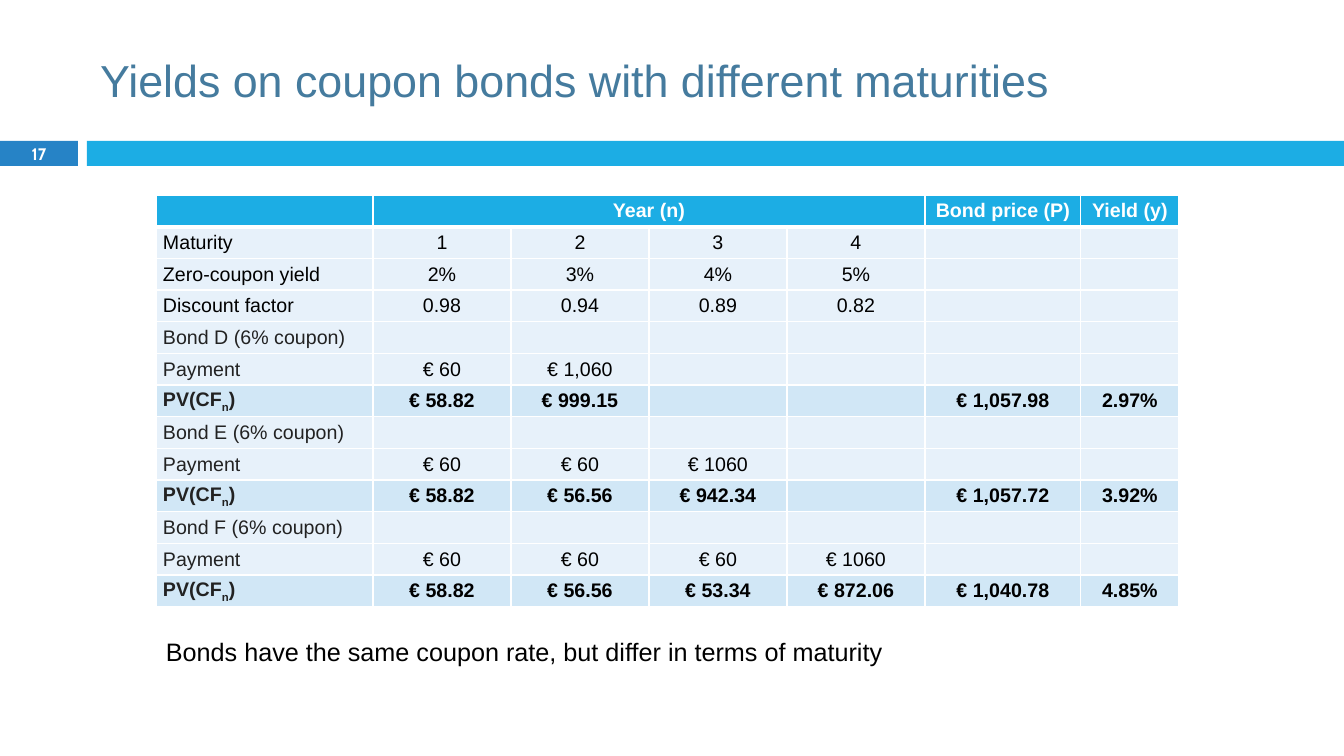
import pptx
import pptx.dml.color
import pptx.enum.shapes
import pptx.enum.text
import pptx.oxml
import pptx.oxml.ns
import pptx.util

ALIGN = pptx.enum.text.PP_ALIGN
MIDDLE = pptx.enum.text.MSO_ANCHOR.MIDDLE
EMU_PER_PX = 914400 / 100.8


def px(*lengths):
    return [pptx.util.Emu(round(n * EMU_PER_PX)) for n in lengths]


def add_text(p, text, size=14, color="000000", bold=False, font="Arial", align=ALIGN.LEFT, baseline=0):
    p.alignment = align
    r = p.add_run()
    r.text = text
    r.font.size = pptx.util.Pt(size)
    r.font.name = font
    r.font.bold = bold
    r.font.color.rgb = pptx.dml.color.RGBColor.from_string(color)
    if baseline:
        r.font._element.set("baseline", str(baseline))


prs = pptx.Presentation()
prs.slide_width, prs.slide_height = px(1344, 756)
s = prs.slides.add_slide(prs.slide_layouts[5])

for left, width, color in [(0, 78, "2683C6"), (87, 1257, "1CADE4")]:
    sp = s.shapes.add_shape(pptx.enum.shapes.MSO_SHAPE.RECTANGLE, *px(left, 141, width, 25))
    sp.shadow.inherit = False
    sp.fill.solid()
    sp.fill.fore_color.rgb = pptx.dml.color.RGBColor.from_string(color)
    sp.line.fill.background()

title = s.shapes.title
title.left, title.top, title.width, title.height = px(90, 25, 1199, 109)
title.text_frame.vertical_anchor = MIDDLE
add_text(title.text_frame.paragraphs[0], "Yields on coupon bonds with different maturities", size=32, color="457B9E")

captions = [
    ((0, 140, 78, 27), "17", dict(size=11.9, color="FFFFFF", bold=True, font="Cabin", align=ALIGN.CENTER)),
    ((156, 624, 1024, 55), "Bonds have the same coupon rate, but differ in terms of maturity", dict(size=18)),
]
for box, text, style in captions:
    tf = s.shapes.add_textbox(*px(*box)).text_frame
    tf.word_wrap = True
    tf.vertical_anchor = MIDDLE
    add_text(tf.paragraphs[0], text, **style)

rows = [
    ["", "Year (n)", "", "", "", "Bond price (P)", "Yield (y)"],
    ["Maturity", "1", "2", "3", "4", "", ""],
    ["Zero-coupon yield", "2%", "3%", "4%", "5%", "", ""],
    ["Discount factor", "0.98", "0.94", "0.89", "0.82", "", ""],
    ["Bond D (6% coupon)", "", "", "", "", "", ""],
    ["Payment", "€ 60", "€ 1,060", "", "", "", ""],
    ["PV(CFn)", "€ 58.82", "€ 999.15", "", "", "€ 1,057.98", "2.97%"],
    ["Bond E (6% coupon)", "", "", "", "", "", ""],
    ["Payment", "€ 60", "€ 60", "€ 1060", "", "", ""],
    ["PV(CFn)", "€ 58.82", "€ 56.56", "€ 942.34", "", "€ 1,057.72", "3.92%"],
    ["Bond F (6% coupon)", "", "", "", "", "", ""],
    ["Payment", "€ 60", "€ 60", "€ 60", "€ 1060", "", ""],
    ["PV(CFn)", "€ 58.82", "€ 56.56", "€ 53.34", "€ 872.06", "€ 1,040.78", "4.85%"],
]
col_widths = [217, 138, 138, 138, 138, 156, 98]
table = s.shapes.add_table(len(rows), len(col_widths), *px(156, 195, sum(col_widths), 412)).table
for column, width in zip(table.columns, px(*col_widths)):
    column.width = width
table.cell(0, 1).merge(table.cell(0, 4))

for i, values in enumerate(rows):
    is_header = i == 0
    is_total = values[0] == "PV(CFn)"
    fill = "1CADE4" if is_header else "D1E7F6" if is_total else "E7F1FA"
    for j, value in enumerate(values):
        cell = table.cell(i, j)
        cell.margin_left, cell.margin_top, cell.margin_right, cell.margin_bottom = px(7, 0, 7, 0)
        cell.vertical_anchor = MIDDLE
        tcPr = cell._tc.get_or_add_tcPr()
        for side in "LRTB":
            points = 3 if (i, side) in [(0, "B"), (1, "T")] else 1
            tcPr.append(pptx.oxml.parse_xml(
                f'<a:ln{side} {pptx.oxml.ns.nsdecls("a")} w="{pptx.util.Pt(points)}">'
                f'<a:solidFill><a:srgbClr val="FFFFFF"/></a:solidFill></a:ln{side}>'))
        cell.fill.solid()
        cell.fill.fore_color.rgb = pptx.dml.color.RGBColor.from_string(fill)
        if not value:
            continue
        p = cell.text_frame.paragraphs[0]
        p.space_before = p.space_after = pptx.util.Pt(2)
        style = dict(
            color="FFFFFF" if is_header else "222222" if j == 0 and i > 3 else "000000",
            bold=is_header or is_total,
            align=ALIGN.LEFT if j == 0 else ALIGN.CENTER)
        if value == "PV(CFn)":
            for text, baseline in [("PV(CF", 0), ("n", -25000), (")", 0)]:
                add_text(p, text, baseline=baseline, **style)
        else:
            add_text(p, value, **style)

prs.save("out.pptx")
